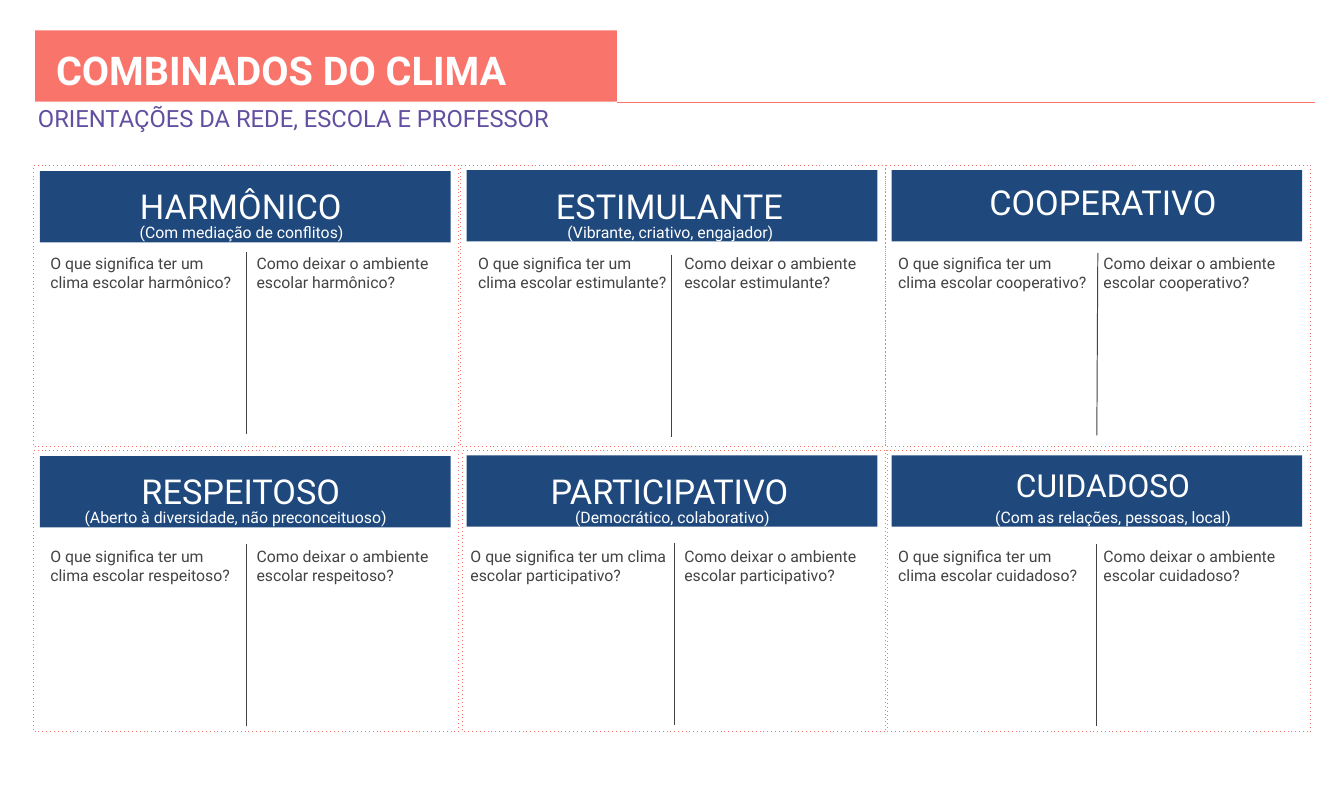
"""Build the slide of school climate agreements: six cards with two questions each."""
from lxml import etree
from pptx import Presentation
from pptx.dml.color import RGBColor
from pptx.enum.dml import MSO_LINE
from pptx.enum.shapes import MSO_CONNECTOR, MSO_SHAPE
from pptx.enum.text import PP_ALIGN
from pptx.oxml.ns import qn
from pptx.util import Inches, Pt

RECTANGLE = MSO_SHAPE.RECTANGLE
STRAIGHT = MSO_CONNECTOR.STRAIGHT
DOTTED = MSO_LINE.ROUND_DOT
LEFT, CENTER = PP_ALIGN.LEFT, PP_ALIGN.CENTER
COLORS = {name: RGBColor.from_string(value) for name, value in {
    "coral": "F9756B", "navy": "1F497D", "purple": "634FA0",
    "gray": "434343", "white": "FFFFFF"}.items()}

presentation = Presentation()
presentation.slide_width = Inches(14.14)
presentation.slide_height = Inches(8.27)
slide = presentation.slides.add_slide(presentation.slide_layouts[6])


def add_text(text, left, top, width=2.04, height=0.69, size=12, color="gray",
             bold=False, align=LEFT, inset=0.01, inset_top=0.01, spacing=None):
    box = slide.shapes.add_textbox(Inches(left), Inches(top), Inches(width), Inches(height))
    frame = box.text_frame
    frame.word_wrap = True
    frame.margin_left, frame.margin_top = Inches(inset), Inches(inset_top)
    frame.margin_right = frame.margin_bottom = 0
    paragraph = frame.paragraphs[0]
    paragraph.alignment = align
    paragraph.line_spacing = spacing
    run = paragraph.add_run()
    run.text = text
    run.font.name, run.font.size, run.font.bold = "Roboto", Pt(size), bold
    run.font.color.rgb = COLORS[color]


def add_rectangle(left, top, width, height, fill=None):
    shape = slide.shapes.add_shape(RECTANGLE, Inches(left), Inches(top), Inches(width), Inches(height))
    shape.shadow.inherit = False
    if fill:
        shape.fill.solid()
        shape.fill.fore_color.rgb = COLORS[fill]
        shape.line.fill.background()
    else:
        shape.fill.background()
        shape.line.color.rgb = COLORS["coral"]
        shape.line.width = Pt(0.75)
        shape.line.dash_style = DOTTED
        shape.element.find(".//" + qn("a:prstDash")).set("val", "dot")


add_rectangle(0.37, 0.32, 6.12, 0.75, fill="coral")
add_text("COMBINADOS DO CLIMA", 0.58, 0.47, width=6.83, size=30, color="white", bold=True)
add_text("ORIENTAÇÕES DA REDE, ESCOLA E PROFESSOR", 0.39, 1.08, width=6.83, size=18, color="purple")

row_height = 3
question_tops = [2.66, 5.74]
columns = [
    {"bar": (0.42, 1.8), "title": (0.5, 1.77, 4.07, 0.55), "inset": 0, "how": 2.69},
    {"bar": (4.91, 1.79), "title": (5.09, 1.77, 3.58, 1.54), "inset": 0.33, "how": 7.19},
    {"bar": (9.38, 1.79), "title": (9.57, 1.73, 4.07, 0.69), "inset": 0, "how": 11.6},
]
cards = [
    [("Harmônico", 26, "(Com mediação de conflitos)", 1.46, 0.35, 0.52, 2.04),
     ("Estimulante", 26, "(Vibrante, criativo, engajador)", 5.96, 4.85, 5.02, 2.04),
     ("Cooperativo", 26, None, None, 9.32, 9.44, 2.04)],
    [("Respeitoso", 26, "(Aberto à diversidade, não preconceituoso)", 0.88, 0.35, 0.52, 2.04),
     ("Participativo", 26, "(Democrático, colaborativo)", 6.04, 4.87, 4.94, 2.17),
     ("Cuidadoso", 24, "(Com as relações, pessoas, local)", 10.46, 9.32, 9.44, 2.04)],
]
for row, row_cards in enumerate(cards):
    offset = row * row_height
    question_top = question_tops[row]
    for column, card in zip(columns, row_cards):
        climate, title_size, subtitle, subtitle_left, card_left, what_left, what_width = card
        add_rectangle(card_left, 1.74 + offset, 4.47, 2.96)
        bar_left, bar_top = column["bar"]
        add_rectangle(bar_left, bar_top + offset, 4.32, 0.75, fill="navy")
        left, top, width, height = column["title"]
        add_text(climate.upper(), left, top + offset, width=width, height=height,
                 size=title_size, color="white", align=CENTER,
                 inset=column["inset"], inset_top=0.15, spacing=1.06)
        if subtitle:
            add_text(subtitle, subtitle_left, 2.33 + offset, width=3.58, color="white")
        add_text(f"O que significa ter um clima escolar {climate.lower()}?",
                 what_left, question_top, width=what_width)
        add_text(f"Como deixar o ambiente escolar {climate.lower()}?", column["how"], question_top)

divider_height = 1.92
dividers = [(2.59, 2.59, 2.65), (7.07, 7.07, 2.68), (11.55, 11.54, 2.66),
            (2.59, 2.59, 5.72), (7.1, 7.1, 5.71), (11.54, 11.54, 5.72)]
lines = [(6.49, 1.08, 13.83, 1.08, "coral")]
lines += [(start, top, end, top + divider_height, "gray") for start, end, top in dividers]
for start_x, start_y, end_x, end_y, color in lines:
    connector = slide.shapes.add_connector(
        STRAIGHT, Inches(start_x), Inches(start_y), Inches(end_x), Inches(end_y))
    connector.line.color.rgb = COLORS[color]
    connector.line.width = Pt(0.75)
    etree.SubElement(connector.element.spPr, qn("a:effectLst"))

presentation.save("out.pptx")
